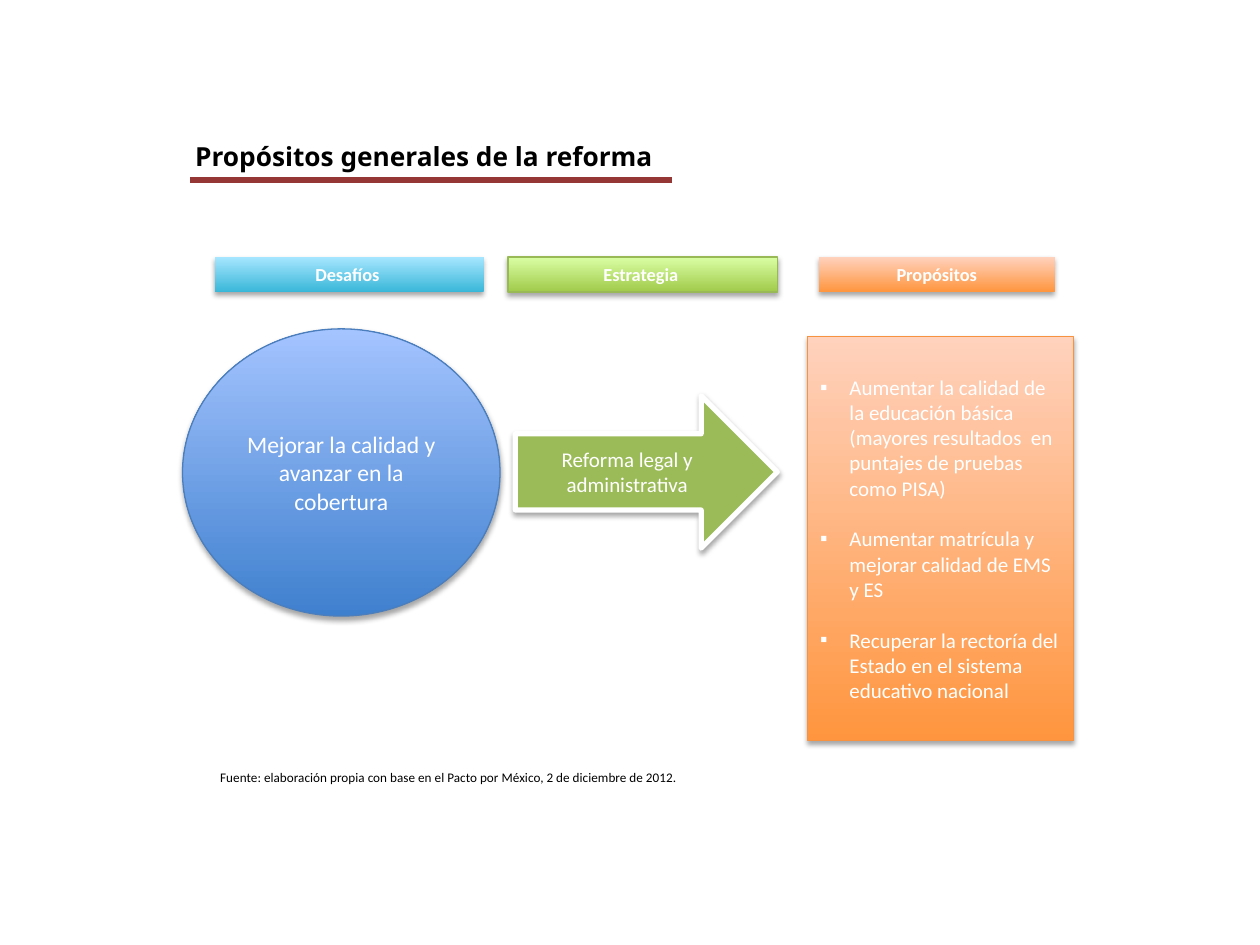
"""Build the slide on the general purposes of the education reform."""
from dataclasses import dataclass

from lxml import etree
from pptx import Presentation
from pptx.dml.color import RGBColor
from pptx.enum.shapes import MSO_CONNECTOR, MSO_SHAPE
from pptx.enum.text import MSO_ANCHOR, MSO_AUTO_SIZE, PP_ALIGN
from pptx.oxml.ns import qn
from pptx.util import Cm, Pt

RECTANGLE = MSO_SHAPE.RECTANGLE
OVAL = MSO_SHAPE.OVAL
RIGHT_ARROW = MSO_SHAPE.RIGHT_ARROW
STRAIGHT = MSO_CONNECTOR.STRAIGHT
TOP = MSO_ANCHOR.TOP
MIDDLE = MSO_ANCHOR.MIDDLE
LEFT = PP_ALIGN.LEFT
CENTER = PP_ALIGN.CENTER
FIXED_SIZE = MSO_AUTO_SIZE.NONE


@dataclass(frozen=True)
class Theme:
    title_font: str = "Noto Sans"
    body_font: str = "Calibri"
    black: str = "000000"
    white: str = "FFFFFF"
    rule: str = "953735"
    cyan: tuple = ("39B7D8", "A7E6FF")
    lime: tuple = ("A0CA4A", "DAFFA5")
    orange: tuple = ("FF953E", "FFD2BD")
    blue: tuple = ("3F80CE", "A4C4FF")
    green: str = "9BBB59"
    lime_edge: str = "98B955"
    orange_edge: str = "F69240"
    blue_edge: str = "4B7EBC"
    title_size: float = 15
    challenge_size: float = 13.5
    body_size: float = 12
    header_size: float = 10.5
    source_size: float = 7.5
    paragraph_gap: float = 14.6
    thin: float = 0.75
    thick: float = 3


def write_text(shape, *lines, font, size, color, bold=False, align=LEFT, anchor=TOP, gap=0):
    """Fill a shape with one formatted paragraph per line and return the paragraphs."""
    frame = shape.text_frame
    frame.text = "\n".join(lines)
    frame.word_wrap = True
    frame.auto_size = FIXED_SIZE
    frame.vertical_anchor = anchor
    for index, paragraph in enumerate(frame.paragraphs):
        paragraph.alignment = align
        paragraph.space_before = Pt(gap if index else 0)
        run_font = paragraph.runs[0].font
        run_font.name = font
        run_font.size = Pt(size)
        run_font.bold = bold
        run_font.color.rgb = RGBColor.from_string(color)
    return frame.paragraphs


def place(shape, left, top, width, height):
    """Move and size a shape in centimetres."""
    shape.left, shape.top = Cm(left), Cm(top)
    shape.width, shape.height = Cm(width), Cm(height)


class SlideBuilder:
    """Hold the theme and the current slide."""

    def __init__(self, slide, theme):
        self.slide = slide
        self.theme = theme

    def title(self, text, *box):
        """Write the title placeholder."""
        shape = self.slide.shapes.title
        place(shape, *box)
        write_text(shape, text, font=self.theme.title_font, size=self.theme.title_size,
                   color=self.theme.black, bold=True, anchor=MIDDLE)

    def rule(self, left, top, right):
        """Draw the horizontal rule under the title."""
        line = self.slide.shapes.add_connector(STRAIGHT, Cm(left), Cm(top), Cm(right), Cm(top))
        line.line.color.rgb = RGBColor.from_string(self.theme.rule)
        line.line.width = Pt(self.theme.thick)
        etree.SubElement(line._element.spPr, qn("a:effectLst"))

    def paint(self, shape, fill, edge=None, edge_width=None):
        """Apply a solid or bottom-to-top gradient fill, an outline and a soft shadow."""
        if isinstance(fill, tuple):
            shape.fill.gradient()
            shape.fill.gradient_angle = 90
            for stop, color in zip(shape.fill.gradient_stops, fill):
                stop.color.rgb = RGBColor.from_string(color)
        else:
            shape.fill.solid()
            shape.fill.fore_color.rgb = RGBColor.from_string(fill)
        if edge:
            shape.line.color.rgb = RGBColor.from_string(edge)
            shape.line.width = Pt(edge_width or self.theme.thin)
        else:
            shape.line.fill.background()
        shape.shadow.inherit = False
        effects = shape._element.spPr.find(qn("a:effectLst"))
        shadow = etree.SubElement(effects, qn("a:outerShdw"), blurRad=str(Pt(3.1)),
                                  dist=str(Pt(1.8)), dir="5400000", rotWithShape="0")
        color = etree.SubElement(shadow, qn("a:srgbClr"), val=self.theme.black)
        etree.SubElement(color, qn("a:alpha"), val="35000")

    def block(self, kind, text, box, fill, edge=None, edge_width=None, **text_format):
        """Add a painted shape with centred white text."""
        shape = self.slide.shapes.add_shape(kind, *map(Cm, box))
        self.paint(shape, fill, edge, edge_width)
        write_text(shape, text, font=self.theme.body_font, color=self.theme.white,
                   align=CENTER, **text_format)

    def bullets(self, lines, box, fill, edge):
        """Write the body placeholder as a painted list with square bullets."""
        shape = self.slide.placeholders[1]
        place(shape, *box)
        self.paint(shape, fill, edge)
        paragraphs = write_text(shape, *lines, font=self.theme.body_font,
                                size=self.theme.body_size, color=self.theme.white,
                                anchor=MIDDLE, gap=self.theme.paragraph_gap)
        for paragraph in paragraphs:
            properties = paragraph._p.get_or_add_pPr()
            properties.set("marL", str(Cm(0.59)))
            properties.set("indent", str(-Cm(0.59)))
            etree.SubElement(properties, qn("a:buChar"), char="▪")

    def source(self, text, *box):
        """Add the source note."""
        shape = self.slide.shapes.add_textbox(*map(Cm, box))
        write_text(shape, text, font=self.theme.body_font, size=self.theme.source_size,
                   color=self.theme.black)


def main():
    """Compose and save the presentation."""
    theme = Theme()
    presentation = Presentation()
    presentation.slide_width, presentation.slide_height = Cm(25.4), Cm(19.05)
    slide = presentation.slides.add_slide(presentation.slide_layouts[1])
    builder = SlideBuilder(slide, theme)

    builder.title("Propósitos generales de la reforma", 3.68, 2.39, 18.54, 1.52)
    builder.rule(3.84, 3.63, 13.54)

    headers = (
        ("Desafíos ", 4.34, 5.41, theme.cyan, None),
        ("Estrategia ", 10.24, 5.44, theme.lime, theme.lime_edge),
        ("Propósitos", 16.51, 4.75, theme.orange, None),
    )
    for text, left, width, fill, edge in headers:
        builder.block(RECTANGLE, text, (left, 5.18, width, 0.71), fill, edge,
                      size=theme.header_size, bold=True)

    builder.block(OVAL, "Mejorar la calidad y avanzar en la cobertura",
                  (3.68, 6.63, 6.4, 5.79), theme.blue, theme.blue_edge,
                  size=theme.challenge_size, anchor=MIDDLE)
    builder.block(RIGHT_ARROW, "Reforma legal y administrativa",
                  (10.39, 7.98, 5.28, 3.07), theme.green, theme.white, theme.thick,
                  size=theme.body_size, anchor=MIDDLE)
    builder.bullets(
        (
            "Aumentar la calidad de la educación básica (mayores resultados  en "
            "puntajes de pruebas como PISA)",
            "Aumentar matrícula y mejorar calidad de EMS y ES",
            "Recuperar la rectoría del Estado en el sistema educativo nacional",
        ),
        (16.28, 6.78, 5.36, 8.15), theme.orange, theme.orange_edge)
    builder.source("Fuente: elaboración propia con base en el Pacto por México, "
                   "2 de diciembre de 2012.", 4.19, 15.39, 14.02, 0.58)

    presentation.save("out.pptx")


if __name__ == "__main__":
    main()
